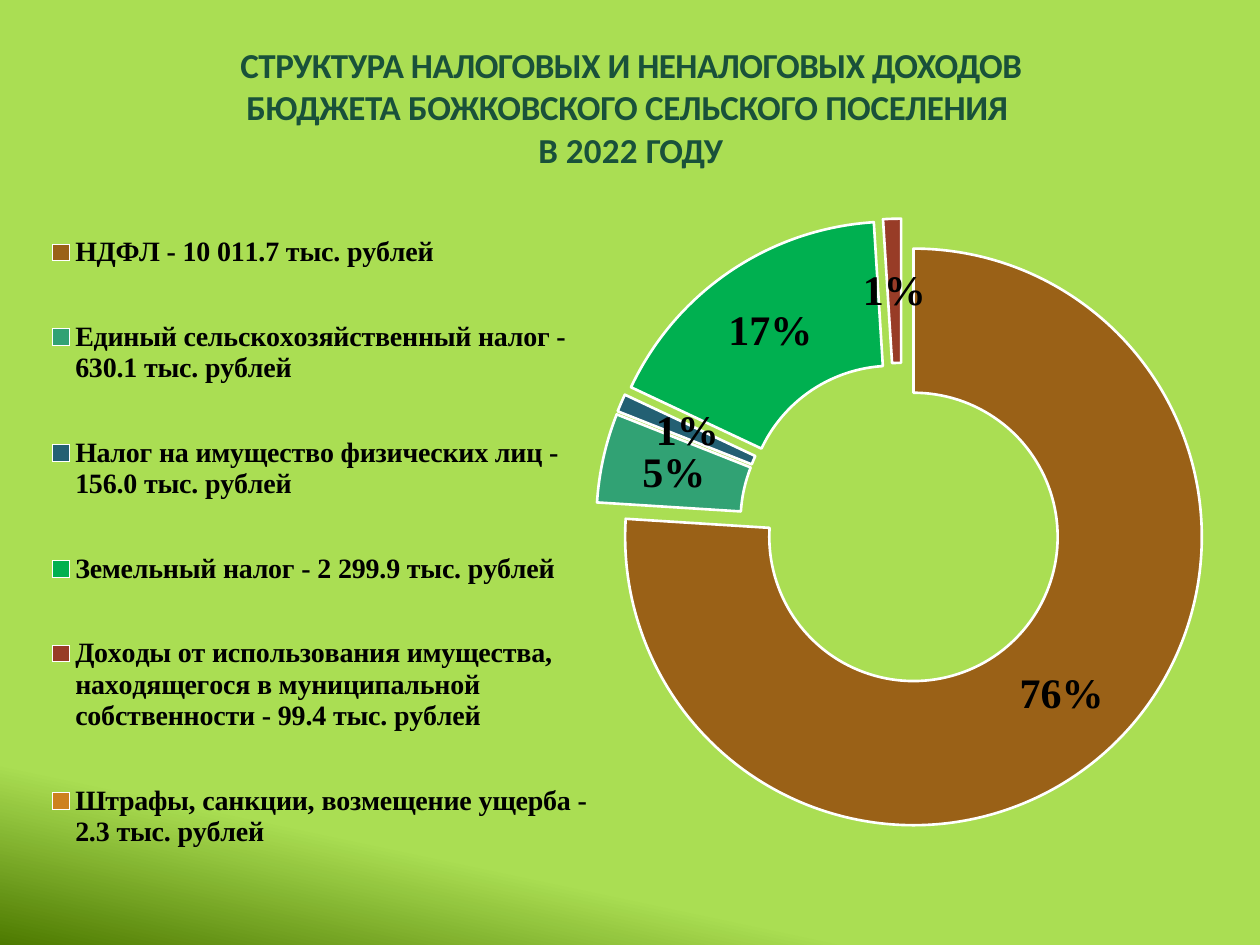
from dataclasses import dataclass

from lxml.etree import SubElement
from pptx import Presentation
from pptx.chart.data import CategoryChartData
from pptx.dml.color import RGBColor as Rgb
from pptx.enum.chart import XL_CHART_TYPE as ChartType, XL_LEGEND_POSITION as LegendPosition
from pptx.enum.shapes import MSO_SHAPE as Preset
from pptx.enum.text import MSO_ANCHOR as Anchor, MSO_AUTO_SIZE as AutoSize, PP_ALIGN as Align
from pptx.oxml import parse_xml
from pptx.oxml.ns import nsdecls, qn
from pptx.util import Cm, Pt


@dataclass(frozen=True)
class Theme:
    light: str = "ACDF55"
    dark: str = "4C7800"
    tint: str = "84C823"
    title: str = "19513A"
    ink: str = "000000"
    outline: str = "FFFFFF"
    title_font: str = "Calibri"
    base_font: str = "TeX Gyre Adventor"
    chart_font: str = "Times New Roman"
    base_size: int = 10
    legend_size: int = 16
    title_size: int = 20
    label_size: int = 24


INCOME = [
    ("НДФЛ - 10 011.7 тыс. рублей", 76, "9A6117"),
    ("Единый сельскохозяйственный налог - 630.1 тыс. рублей", 5, "31A274"),
    ("Налог на имущество физических лиц - 156.0 тыс. рублей", 1, "236073"),
    ("Земельный налог - 2 299.9 тыс. рублей", 17, "00B050"),
    ("Доходы от использования имущества, находящегося в муниципальной "
     "собственности - 99.4 тыс. рублей", 1, "983C27"),
    ("Штрафы, санкции, возмещение ущерба - 2.3 тыс. рублей", 0, "CD811F"),
]

# Each line of the title is a list of (text, letter spacing in points).
TITLE = [
    [("СТРУКТУРА НАЛОГОВЫХ И НЕНАЛОГОВЫХ ДОХОДОВ ", -0.3),
     ("БЮДЖЕТА БОЖКОВСКОГО СЕЛЬСКОГО ПОСЕЛЕНИЯ ", -0.2)],
    [("В ", 0), ("2022 ", 0.1), ("ГОДУ", -0.4)],
]


def style_font(font, name, size, color, bold=True):
    font.name, font.size, font.bold = name, Pt(size), bold
    font.color.rgb = Rgb.from_string(color)


def manual_layout(x, y, w, h, inner=False):
    """Return a c:layout element; lengths are fractions of the chart."""
    target = '<c:layoutTarget val="inner"/>' if inner else ""
    modes = "".join(f'<c:{side}Mode val="edge"/>' for side in "xy")
    sizes = "".join(f'<c:{key} val="{value}"/>' for key, value in zip("xywh", (x, y, w, h)))
    return parse_xml(f'<c:layout {nsdecls("c")}><c:manualLayout>{target}{modes}{sizes}'
                     '</c:manualLayout></c:layout>')


def replace_layout(parent, layout, after=None):
    for old in parent.findall(qn("c:layout")):
        parent.remove(old)
    if after is None:
        parent.insert(0, layout)
    else:
        after.addnext(layout)


class SlideBuilder:
    def __init__(self, deck, theme):
        self.deck, self.theme = deck, theme
        self.slide = deck.slides.add_slide(deck.slide_layouts[5])

    def background(self, angle):
        fill = self.slide.background.fill
        fill.gradient()
        fill.gradient_angle = 360 - angle
        stops = [(0.85, self.theme.light), (1, self.theme.dark)]
        for stop, (position, color) in zip(fill.gradient_stops, stops):
            stop.position = position
            stop.color.rgb = Rgb.from_string(color)

    def tint(self, opacity):
        """Lay a faint colour over the whole slide, behind the title."""
        shapes = self.slide.shapes
        box = shapes.add_shape(Preset.RECTANGLE, 0, 0,
                               self.deck.slide_width, self.deck.slide_height)
        box.shadow.inherit = False
        box.line.fill.background()
        box.fill.solid()
        box.fill.fore_color.rgb = Rgb.from_string(self.theme.tint)
        color = next(box._element.spPr.iter(qn("a:srgbClr")))
        SubElement(color, qn("a:alpha")).set("val", str(opacity * 1000))
        shapes.title._element.addprevious(box._element)

    def title(self, lines, left, top, width, height):
        theme, box = self.theme, self.slide.shapes.title
        box.left, box.top, box.width, box.height = left, top, width, height
        frame = box.text_frame
        frame.word_wrap, frame.auto_size = True, AutoSize.SHAPE_TO_FIT_TEXT
        frame.vertical_anchor = Anchor.TOP
        frame.margin_left = frame.margin_right = frame.margin_bottom = 0
        frame.margin_top = Cm(0.03)
        for index, spans in enumerate(lines):
            para = frame.add_paragraph() if index else frame.paragraphs[0]
            para.alignment = Align.CENTER
            para.space_before = Pt(1 if index else 0)
            style_font(para.font, theme.title_font, theme.title_size, theme.title)
            for text, spacing in spans:
                span = para.add_run()
                span.text = text
                span.font._element.set("spc", str(round(spacing * 100)))

    def doughnut(self, rows, left, top, width, height):
        theme = self.theme
        names, values, colors = zip(*rows)
        data = CategoryChartData()
        data.categories = names
        data.add_series("Series 1", values)
        chart = self.slide.shapes.add_chart(
            ChartType.DOUGHNUT, left, top, width, height, data).chart
        chart.has_title = False
        style_font(chart.font, theme.base_font, theme.base_size, theme.outline, False)

        chart.has_legend = True
        legend = chart.legend
        legend.position, legend.include_in_layout = LegendPosition.BOTTOM, False
        style_font(legend.font, theme.chart_font, theme.legend_size, theme.ink)
        replace_layout(legend._element, manual_layout(0.01, 0.01, 0.47, 0.98),
                       legend._element.find(qn("c:legendPos")))

        plot = chart.plots[0]
        plot.vary_by_categories = True
        plot._element.find(qn("c:holeSize")).set("val", "61")
        replace_layout(plot._element.getparent(),
                       manual_layout(0.48, 0.03, 0.52, 0.89, inner=True))

        series = plot.series[0]
        series._element.find(qn("c:tx")).addnext(
            parse_xml(f'<c:explosion {nsdecls("c")} val="12"/>'))
        for index, color in enumerate(colors):
            slice_format = series.points[index].format
            slice_format.fill.solid()
            slice_format.fill.fore_color.rgb = Rgb.from_string(color)
            slice_format.line.color.rgb = Rgb.from_string(theme.outline)
            slice_format.line.width = Pt(1.5)

        labels = series.data_labels
        labels.show_percentage, labels.show_value = True, False
        labels.number_format, labels.number_format_is_linked = "0%", False
        style_font(labels.font, theme.chart_font, theme.label_size, theme.ink)


def main():
    deck = Presentation()
    deck.slide_width, deck.slide_height = Cm(25.4), Cm(19.05)
    page = SlideBuilder(deck, Theme())
    page.background(angle=102)
    page.tint(opacity=3)
    page.title(TITLE, Cm(3.48), Cm(0.84), Cm(18.47), Cm(2.64))
    page.doughnut(INCOME, Cm(0.64), Cm(3.56), Cm(23.7), Cm(14.76))
    deck.save("out.pptx")


if __name__ == "__main__":
    main()
